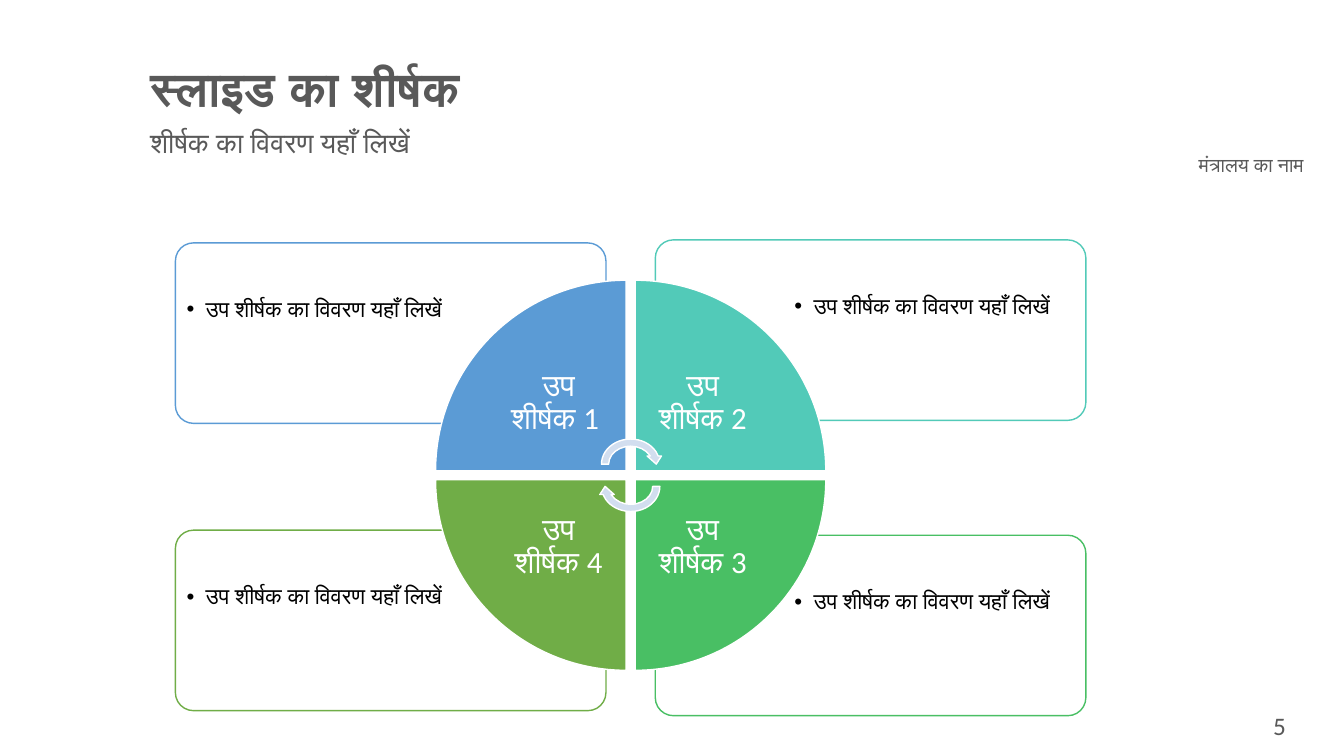
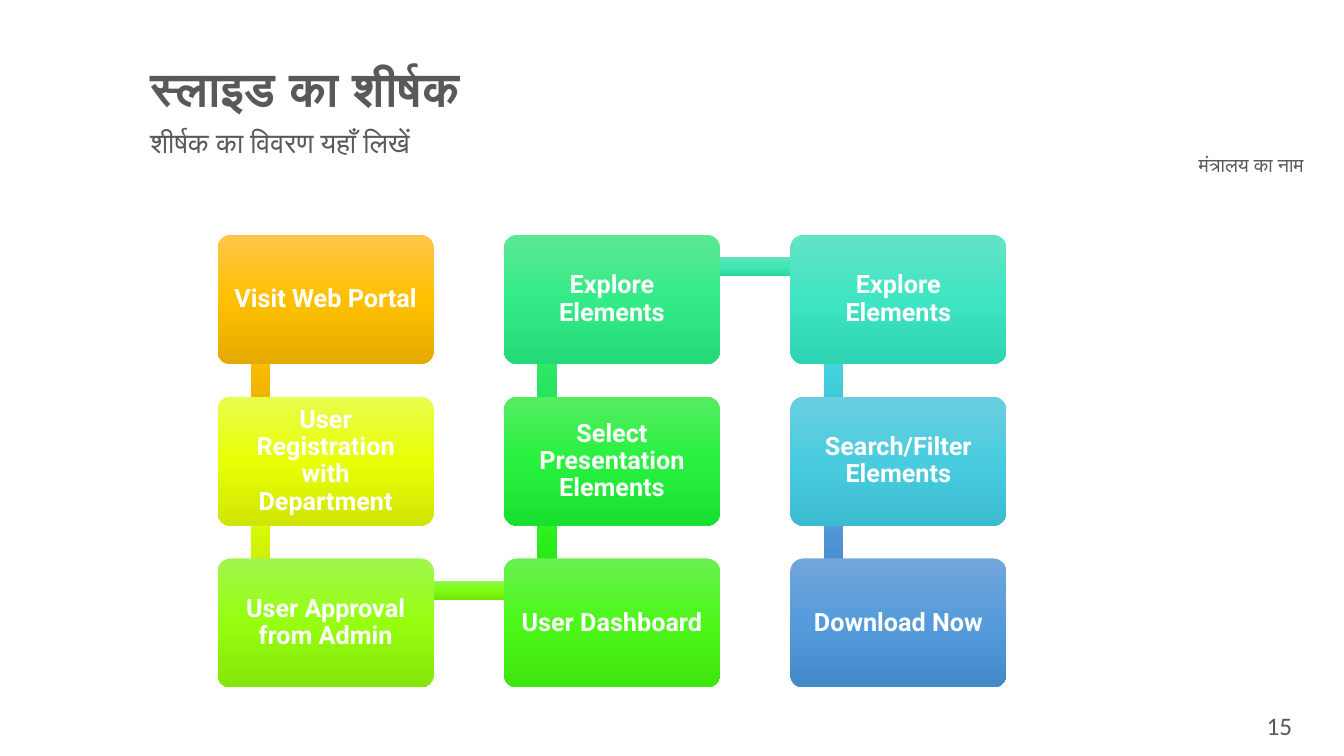
from dataclasses import dataclass
from typing import Any

from lxml.etree import SubElement
from pptx import Presentation
from pptx.dml.color import RGBColor
from pptx.enum.shapes import MSO_SHAPE as Shape
from pptx.enum.text import MSO_ANCHOR as Anchor, MSO_AUTO_SIZE as AutoSize, PP_ALIGN as Align
from pptx.oxml.ns import qn
from pptx.util import Inches, Pt

GREY, WHITE, BLACK = "595959", "FFFFFF", "000000"
BLUE, TEAL, GREEN, OLIVE = "5B9BD5", "52CAB8", "49BF64", "70AD47"
ARROW_TINT = "D2DEEF"
DETAIL = "उप शीर्षक का विवरण यहाँ लिखें"

CARD_W, CARD_H = 4.27, 1.79
WEDGE, LABEL = 1.89, 1.34
BOX_W, BOX_H, BAR = 2.14, 1.28, 0.19
GRID_LEFT, GRID_TOP = 2.16, 2.33
COLUMN_PITCH, ROW_PITCH = 2.84, 3.21 / 2


@dataclass(frozen=True)
class Style:
    size: float
    color: str = GREY
    bold: bool = False
    font: str = "Calibri"
    align: Any = Align.LEFT
    spacing: float = 1.0
    anchor: Any = Anchor.TOP
    inset: float | None = None
    bullet: bool = False


@dataclass(frozen=True)
class Quadrant:
    label: str
    color: str
    right: bool
    lower: bool
    turn: int
    card_top: float


@dataclass(frozen=True)
class Step:
    text: str
    column: int
    row: int
    colors: str


@dataclass(frozen=True)
class Link:
    column: int
    row: int
    across: bool
    colors: str


TITLE = Style(34, bold=True, spacing=0.9)
SUBTITLE = Style(20, spacing=0.9)
MINISTRY = Style(14)
PAGE_NUMBER = Style(18, align=Align.CENTER)
WEDGE_LABEL = Style(22, WHITE, align=Align.CENTER, spacing=0.9, anchor=Anchor.MIDDLE, inset=0.17)
STEP = Style(18, WHITE, True, "Roboto", Align.CENTER, 0.9, Anchor.MIDDLE, 0.11)
UPPER_DETAIL = Style(16, BLACK, spacing=0.9, anchor=Anchor.MIDDLE, inset=0.07, bullet=True)
LOWER_DETAIL = Style(16, BLACK, spacing=0.9, inset=0.07, bullet=True)

QUADRANTS = [
    Quadrant("उप शीर्षक 1 ", BLUE, False, False, 0, 2.41),
    Quadrant("उप शीर्षक 2", TEAL, True, False, 90, 2.38),
    Quadrant("उप शीर्षक 3", GREEN, True, True, 180, 5.31),
    Quadrant("उप शीर्षक 4", OLIVE, False, True, 270, 5.26),
]

STEPS = [
    Step("Visit Web Portal ", 0, 0, "FFC64B FFC000 E3AB00"),
    Step("User Registration with Department", 0, 1, "E8FC4C E8FF06 D0E503"),
    Step("User Approval from Admin", 0, 2, "A0F74E 96FE0E 85E509"),
    Step("User Dashboard", 1, 2, "6AF151 4CF71A 3FE50E"),
    Step("Select Presentation Elements", 1, 1, "56EC62 27F13E 18E02F"),
    Step("Explore Elements", 1, 0, "5CE795 33EB86 24DA77"),
    Step("Explore Elements", 2, 0, "63E3C6 3FE5C3 2FD4B2"),
    Step("Search/Filter Elements", 2, 1, "6ACDDE 4ACCE0 3ABBCF"),
    Step("Download Now", 2, 2, "71A6DB 559BDB 448ACA"),
]

LINKS = [
    Link(0, 0, False, "FFC64B FFC000 E3AB00"),
    Link(0, 1, False, "DCFC4C DCFF07 C5E504"),
    Link(0, 2, True, "8EF54F 7FFC11 71E50A"),
    Link(1, 1, False, "5BEF53 31F420 22E411"),
    Link(1, 0, False, "59E97E 2EED69 1FDD59"),
    Link(1, 0, True, "61E4B9 3BE7B3 2CD6A2"),
    Link(2, 0, False, "69D4DF 48D4E1 38C3D0"),
    Link(2, 1, False, "71A6DB 559BDB 448ACA"),
]


def rgb(color: str) -> RGBColor:
    return RGBColor.from_string(color)


def apply(target: Any, values: dict[str, Any]) -> None:
    for key, value in values.items():
        setattr(target, key, value)


def write(frame: Any, text: str, style: Style) -> None:
    apply(frame, {"word_wrap": True, "auto_size": AutoSize.NONE, "vertical_anchor": style.anchor})
    if style.inset is not None:
        sides = ("left", "top", "right", "bottom")
        apply(frame, {f"margin_{side}": Inches(style.inset) for side in sides})
    paragraph = frame.paragraphs[0]
    if style.bullet:
        properties = paragraph._p.get_or_add_pPr()
        properties.set("marL", str(Inches(0.19)))
        properties.set("indent", str(Inches(-0.19)))
        SubElement(properties, qn("a:buFont")).set("typeface", "Arial")
        SubElement(properties, qn("a:buChar")).set("char", "•")
    apply(paragraph, {"alignment": style.align, "line_spacing": style.spacing})
    run = paragraph.add_run()
    run.text = text
    apply(run.font, {"name": style.font, "size": Pt(style.size), "bold": style.bold})
    run.font.color.rgb = rgb(style.color)


def add_text(slide: Any, text: str, style: Style,
             left: float, top: float, width: float, height: float) -> None:
    area = slide.shapes.add_textbox(Inches(left), Inches(top), Inches(width), Inches(height))
    write(area.text_frame, text, style)


def add_plain(slide: Any, kind: Any, left: float, top: float, width: float, height: float,
              rotation: float = 0) -> Any:
    outline = slide.shapes.add_shape(kind, Inches(left), Inches(top), Inches(width), Inches(height))
    outline.rotation = rotation
    outline.shadow.inherit = False
    if kind == Shape.ROUNDED_RECTANGLE:
        outline.adjustments[0] = 0.1
    return outline


def paint(part: Any, fill: str, line: str, opacity: int = 100) -> None:
    part.fill.solid()
    part.fill.fore_color.rgb = rgb(fill)
    part.line.color.rgb = rgb(line)
    part.line.width = Pt(1)
    if opacity < 100:
        color = part._element.spPr.find(qn("a:solidFill"))[0]
        SubElement(color, qn("a:alpha")).set("val", str(opacity * 1000))


def shade(part: Any, colors: str) -> None:
    part.line.fill.background()
    part.fill.gradient()
    part.fill.gradient_angle = 270
    stops = part._element.spPr.find(f".//{qn('a:gsLst')}")
    for stop in list(stops):
        stops.remove(stop)
    for index, color in enumerate(colors.split()):
        stop = SubElement(stops, qn("a:gs"))
        stop.set("pos", str(index * 50000))
        SubElement(stop, qn("a:srgbClr")).set("val", color)


def start_slide(deck: Any, number: int) -> Any:
    slide = deck.slides.add_slide(deck.slide_layouts[5])
    title = slide.shapes.title
    apply(title, {"left": Inches(1.39), "top": Inches(0.6),
                  "width": Inches(9.61), "height": Inches(0.55)})
    write(title.text_frame, "स्लाइड का शीर्षक", TITLE)
    add_text(slide, "शीर्षक का विवरण यहाँ लिखें", SUBTITLE, 1.39, 1.23, 9.61, 0.63)
    add_text(slide, "मंत्रालय का नाम", MINISTRY, 11.79, 1.47, 1.57, 0.34)
    add_text(slide, str(number), PAGE_NUMBER, 12.1, 7, 1.18, 0.45)
    return slide


def add_card(slide: Any, quadrant: Quadrant) -> None:
    left = 6.5 if quadrant.right else 1.74
    card = add_plain(slide, Shape.ROUNDED_RECTANGLE, left, quadrant.card_top, CARD_W, CARD_H)
    paint(card, WHITE, quadrant.color, 90)
    add_text(slide, DETAIL, LOWER_DETAIL if quadrant.lower else UPPER_DETAIL,
             left + (1.31 if quadrant.right else 0.04),
             quadrant.card_top + (0.48 if quadrant.lower else 0.04), 2.91, 1.26)


def add_wedge(slide: Any, quadrant: Quadrant) -> None:
    left = 6.3 if quadrant.right else 4.32
    top = 4.76 if quadrant.lower else 2.78
    wedge = add_plain(slide, Shape.PIE_WEDGE, left, top, WEDGE, WEDGE, quadrant.turn)
    paint(wedge, quadrant.color, WHITE)
    inward = WEDGE - LABEL
    add_text(slide, quadrant.label, WEDGE_LABEL,
             left + (0 if quadrant.right else inward),
             top + (0 if quadrant.lower else inward), LABEL, LABEL)


def build_cycle(deck: Any) -> None:
    slide = start_slide(deck, 5)
    for quadrant in reversed(QUADRANTS):
        add_card(slide, quadrant)
    for quadrant in QUADRANTS:
        add_wedge(slide, quadrant)
    for top, turn in ((4.32, 0), (4.54, 180)):
        arrow = add_plain(slide, Shape.CIRCULAR_ARROW, 5.93, top, 0.65, 0.57, turn)
        paint(arrow, ARROW_TINT, WHITE)


def grid_position(column: int, row: int) -> tuple[float, float]:
    return GRID_LEFT + column * COLUMN_PITCH, GRID_TOP + row * ROW_PITCH


def build_process(deck: Any) -> None:
    slide = start_slide(deck, 15)
    for link in LINKS:
        left, top = grid_position(link.column, link.row)
        if link.across:
            place = (left + 0.43, top + 0.22, COLUMN_PITCH, BAR)
        else:
            place = (left + 0.33, top + 0.32, BAR, ROW_PITCH)
        shade(add_plain(slide, Shape.RECTANGLE, *place), link.colors)
    for step in STEPS:
        left, top = grid_position(step.column, step.row)
        box = add_plain(slide, Shape.ROUNDED_RECTANGLE, left, top, BOX_W, BOX_H)
        shade(box, step.colors)
        write(box.text_frame, step.text, STEP)


def main() -> None:
    deck = Presentation()
    apply(deck, {"slide_width": Inches(13.33), "slide_height": Inches(7.5)})
    build_cycle(deck)
    build_process(deck)
    deck.save("out.pptx")


if __name__ == "__main__":
    main()
